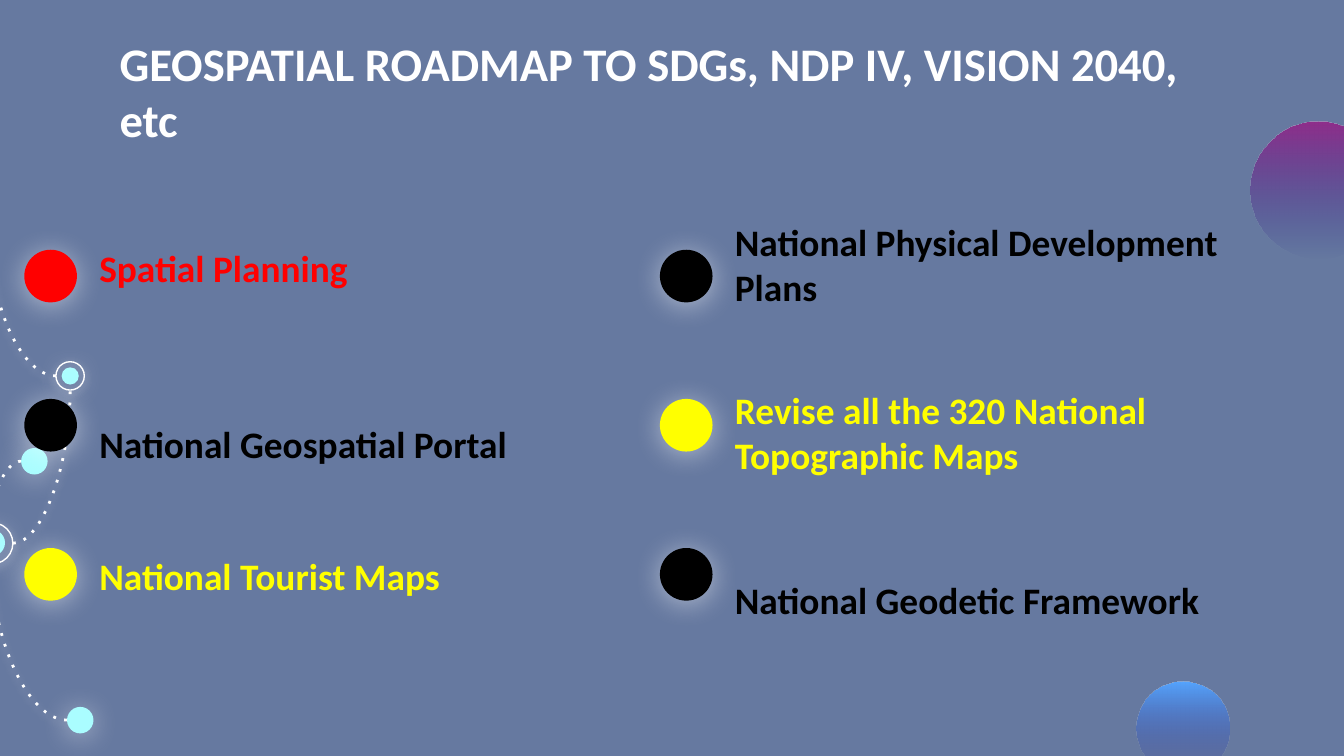
from lxml.etree import SubElement
from pptx import Presentation
from pptx.dml.color import RGBColor
from pptx.enum.dml import MSO_LINE
from pptx.enum.shapes import MSO_CONNECTOR, MSO_SHAPE
from pptx.enum.text import MSO_ANCHOR, MSO_AUTO_SIZE, PP_ALIGN
from pptx.oxml.ns import qn
from pptx.util import Pt

# Content
TITLE = "GEOSPATIAL ROADMAP TO SDGs, NDP IV, VISION 2040, etc"
WHITE, BLACK, RED, YELLOW, AQUA = "FFFFFF", "000000", "FF0000", "FFFF00", "AAFDFF"
BACKGROUND = "6679A0"

# Each item: text, colour, top and height of its text box
COLUMNS = [
    {"bullet_left": 13, "text_width": 303, "items": [
        ("Spatial Planning", RED, 122.4, 40.3),
        ("National Geospatial Portal", BLACK, 202.3, 54.7),
        ("National Tourist Maps", YELLOW, 282.2, 45.4)]},
    {"bullet_left": 353.5, "text_width": 320.4, "items": [
        ("National Physical Development Plans", BLACK, 144.7, 28.1),
        ("Revise all the 320 National Topographic Maps", YELLOW, 204.5, 58.3),
        ("National Geodetic Framework", BLACK, 282.2, 58.3)]},
]
BULLET_TOP, BULLET_STEP, BULLET_SIZE, TEXT_OFFSET = 133.8, 79.9, 28.2, 33.1

# Decoration: left, top, diameter, colour
GRADIENT_BALLS = [(608.8, 365, 50, "55A4FF"), (669.8, 65.2, 73.2, "8F2E8B")]
DOTS = [(11.3, 240, 14.2), (35.9, 378.7, 14.2), (-11.5, 283.7, 14.2), (33, 196.8, 9.2)]
RINGS = [(-15.1, 280.1, 22), (30, 193.8, 15.2)]
# Each arc leaves its first point level and reaches its second point upright
ARCS = [
    (11.3, 247.1, -4.3, 280.1, False),
    (30, 201.4, -4.3, 132.5, True),
    (7, 291.1, 37.6, 209, True),
    (35.9, 385.8, -4.3, 301.7, True),
]
GLOW, FAINT_GLOW = 15.8, 4.5


def colour(code):
    return RGBColor.from_string(code)


def add_glow(shape, blur):
    """Give the shape a soft white shadow, or none when blur is 0."""
    properties = shape._element.spPr
    for effects in properties.findall(qn("a:effectLst")):
        properties.remove(effects)
    effects = SubElement(properties, qn("a:effectLst"))
    if blur:
        shadow = SubElement(effects, qn("a:outerShdw"), blurRad=str(Pt(blur)),
                            dist=str(Pt(1.5)), dir="5400000", algn="bl", rotWithShape="0")
        tint = SubElement(shadow, qn("a:srgbClr"), val=WHITE)
        SubElement(tint, qn("a:alpha"), val="50000")


def add_circle(slide, left, top, size, fill=None, blur=0):
    """Add a filled circle, or a thin white ring when there is no fill."""
    circle = slide.shapes.add_shape(MSO_SHAPE.OVAL, Pt(left), Pt(top), Pt(size), Pt(size))
    if fill:
        circle.fill.solid()
        circle.fill.fore_color.rgb = colour(fill)
        circle.line.fill.background()
    else:
        circle.fill.background()
        circle.line.color.rgb = colour(WHITE)
        circle.line.width = Pt(0.75)
    add_glow(circle, blur)
    return circle


def add_gradient_ball(slide, left, top, size, start):
    ball = add_circle(slide, left, top, size, start)
    ball.fill.gradient()
    ball.fill.gradient_angle = 270
    for stop, code in zip(ball.fill.gradient_stops, (start, "2E2E8F")):
        stop.color.rgb = colour(code)
    end_colour = list(ball._element.spPr.iter(qn("a:srgbClr")))[-1]
    SubElement(end_colour, qn("a:alpha"), val="0")


def add_arc(slide, x1, y1, x2, y2, glowing):
    arc = slide.shapes.add_connector(MSO_CONNECTOR.CURVE, Pt(x1), Pt(y1), Pt(x2), Pt(y2))
    arc.line.color.rgb = colour(WHITE)
    arc.line.width = Pt(1.5)
    arc.line.dash_style = MSO_LINE.ROUND_DOT
    properties = arc._element.spPr
    properties.find(qn("a:prstGeom")).set("prst", "curvedConnector2")
    next(properties.iter(qn("a:prstDash"))).set("val", "dot")
    add_glow(arc, FAINT_GLOW if glowing else 0)


def write_text(shape, text, size, code, anchor):
    frame = shape.text_frame
    frame.word_wrap = True
    frame.auto_size = MSO_AUTO_SIZE.NONE
    frame.vertical_anchor = anchor
    frame.margin_left = frame.margin_right = Pt(7.2)
    frame.margin_top = frame.margin_bottom = Pt(7.2)
    frame.text = text
    paragraph = frame.paragraphs[0]
    paragraph.alignment = PP_ALIGN.LEFT
    font = paragraph.font
    font.name, font.size, font.bold = "Calibri", Pt(size), True
    font.color.rgb = colour(code)


def main():
    presentation = Presentation()
    presentation.slide_width, presentation.slide_height = Pt(720), Pt(405)
    slide = presentation.slides.add_slide(presentation.slide_layouts[5])
    slide.background.fill.solid()
    slide.background.fill.fore_color.rgb = colour(BACKGROUND)

    # Decoration
    for ball in GRADIENT_BALLS:
        add_gradient_ball(slide, *ball)
    for arc in ARCS:
        add_arc(slide, *arc)
    for dot in DOTS:
        add_circle(slide, *dot, fill=AQUA, blur=GLOW)
    for ring in RINGS:
        add_circle(slide, *ring, blur=FAINT_GLOW)

    # Title
    title = slide.shapes.title
    title.left, title.top, title.width, title.height = Pt(56.9), Pt(11.5), Pt(607), Pt(45.4)
    write_text(title, TITLE, 25, WHITE, MSO_ANCHOR.TOP)

    # Two columns of bullets and labels
    for column in COLUMNS:
        left = column["bullet_left"]
        for row, (text, code, top, height) in enumerate(column["items"]):
            add_circle(slide, left, BULLET_TOP + row * BULLET_STEP, BULLET_SIZE, code, GLOW)
            label = slide.shapes.add_textbox(Pt(left + TEXT_OFFSET), Pt(top),
                                             Pt(column["text_width"]), Pt(height))
            write_text(label, text, 20, code, MSO_ANCHOR.BOTTOM)

    presentation.save("out.pptx")


if __name__ == "__main__":
    main()
